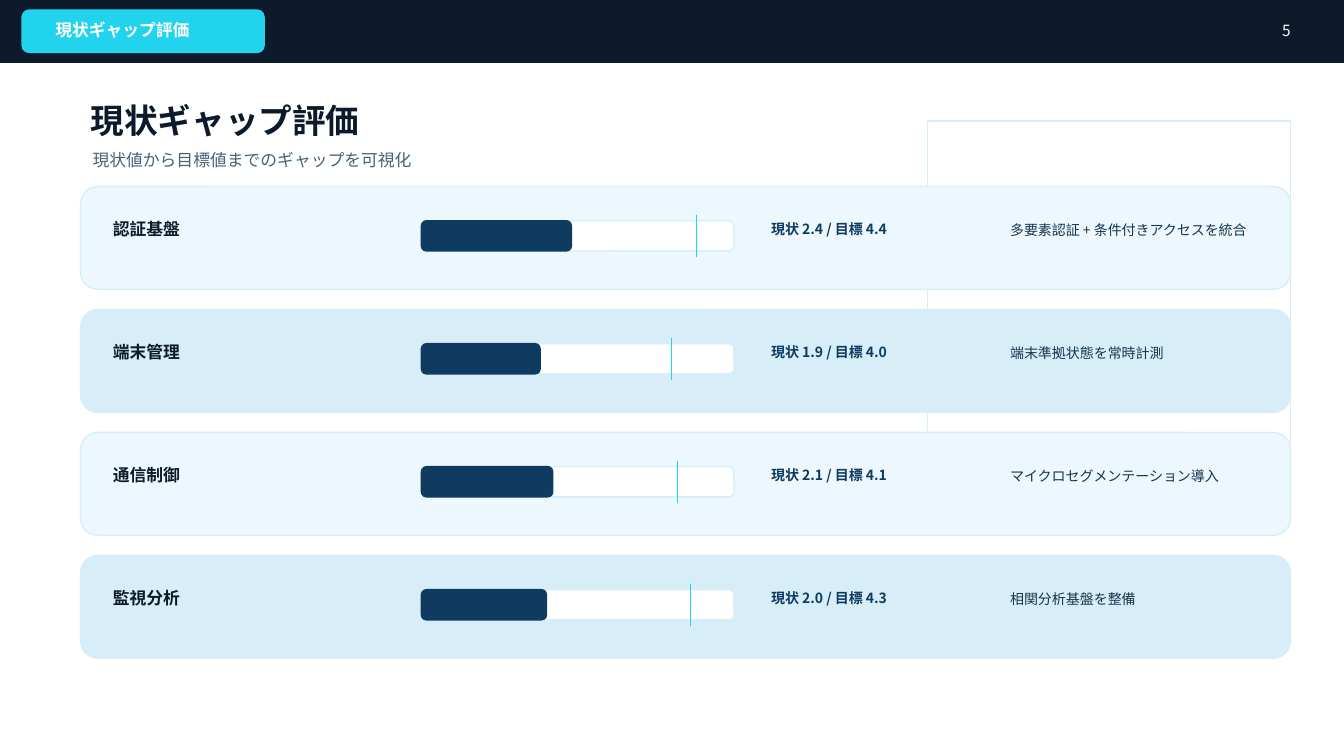
from pptx import Presentation
from pptx.dml.color import RGBColor
from pptx.enum.shapes import MSO_CONNECTOR as Connector, MSO_SHAPE as Preset
from pptx.enum.text import MSO_ANCHOR as Anchor, MSO_AUTO_SIZE as AutoSize, PP_ALIGN as Align
from pptx.oxml.ns import qn
from pptx.util import Pt
from lxml.etree import SubElement

HEADING = "現状ギャップ評価"
SUBTITLE = "現状値から目標値までのギャップを可視化"
PAGE_NUMBER = "5"
GAPS = [
    ("認証基盤", 2.4, 4.4, "多要素認証 + 条件付きアクセスを統合"),
    ("端末管理", 1.9, 4.0, "端末準拠状態を常時計測"),
    ("通信制御", 2.1, 4.1, "マイクロセグメンテーション導入"),
    ("監視分析", 2.0, 4.3, "相関分析基盤を整備"),
]
MAX_SCORE = 5

SANS = "Noto Sans CJK JP"
MONO = "DejaVu Sans Mono"
WHITE = RGBColor(0xFF, 0xFF, 0xFF)
INK = RGBColor(0x0C, 0x1A, 0x2C)
CYAN = RGBColor(0x22, 0xD3, 0xEE)
SLATE = RGBColor(0x44, 0x62, 0x7A)
NAVY = RGBColor(0x0E, 0x3B, 0x5F)
DEEP = RGBColor(0x16, 0x35, 0x4E)
PALE = RGBColor(0xEC, 0xF8, 0xFD)
ICE = RGBColor(0xD7, 0xEE, 0xF8)

PX = 9144
SLIDE_W, SLIDE_H = 1333, 750
CARD_X, CARD_Y, CARD_W, CARD_H, CARD_STEP = 80, 185, 1200, 102, 122
BAR_X, BAR_W, BAR_H = 418, 310, 30
FRAME_LEFT, FRAME_RIGHT, FRAME_TOP, FRAME_BOTTOM = 920, 1280, 120, 440

prs = Presentation()
prs.slide_width, prs.slide_height = SLIDE_W * PX, SLIDE_H * PX
slide = prs.slides.add_slide(prs.slide_layouts[5])


def emu(*lengths):
    return [round(length * PX) for length in lengths]


def rule(x1, y1, x2, y2, color):
    line = slide.shapes.add_connector(Connector.STRAIGHT, *emu(x1, y1, x2, y2))
    line.line.color.rgb = color
    line.line.width = Pt(1)
    SubElement(line._element.spPr, qn("a:effectLst"))


def block(box, fill, border, preset=Preset.ROUNDED_RECTANGLE):
    panel = slide.shapes.add_shape(preset, *emu(*box))
    panel.shadow.inherit = False
    panel.fill.solid()
    panel.fill.fore_color.rgb = fill
    panel.line.color.rgb = border
    panel.line.width = Pt(1)


def write(holder, text, size, color, bold=False, face=SANS, align=Align.LEFT):
    frame = holder.text_frame
    frame.word_wrap = True
    frame.auto_size = AutoSize.NONE
    frame.vertical_anchor = Anchor.MIDDLE
    paragraph = frame.paragraphs[0]
    paragraph.alignment = align
    run = paragraph.add_run()
    run.text = text
    font = run.font
    font.size, font.bold, font.name = Pt(size), bold, face
    font.color.rgb = color
    SubElement(run._r.get_or_add_rPr(), qn("a:ea"), typeface=face)


def label(box, *content, **style):
    write(slide.shapes.add_textbox(*emu(*box)), *content, **style)


rule(FRAME_LEFT, FRAME_TOP, FRAME_RIGHT, FRAME_TOP, ICE)
for x in (FRAME_LEFT, FRAME_RIGHT):
    rule(x, FRAME_TOP, x, FRAME_BOTTOM, ICE)

block((0, 0, SLIDE_W, 62), INK, INK, Preset.RECTANGLE)
block((22, 10, 240, 42), CYAN, CYAN)
label((45, 18, 880, 24), HEADING, 12, WHITE, bold=True)
label((1215, 18, 75, 24), PAGE_NUMBER, 11, WHITE, align=Align.RIGHT)

title = slide.shapes.title
title.left, title.top, title.width, title.height = emu(80, 95, 1140, 48)
write(title, HEADING, 24, INK, bold=True, face=MONO)
label((82, 144, 1120, 30), SUBTITLE, 12, SLATE)

for index, (area, current, target, action) in enumerate(GAPS):
    top = CARD_Y + index * CARD_STEP
    bar_y = top + 34
    target_x = BAR_X + BAR_W * target / MAX_SCORE
    block((CARD_X, top, CARD_W, CARD_H), ICE if index % 2 else PALE, ICE)
    label((102, top + 30, 295, 24), area, 12, INK, bold=True)
    block((BAR_X, bar_y, BAR_W, BAR_H), WHITE, ICE)
    block((BAR_X, bar_y, BAR_W * current / MAX_SCORE, BAR_H), NAVY, NAVY)
    rule(target_x, bar_y - 6, target_x, bar_y + BAR_H + 6, CYAN)
    label((755, top + 30, 225, 24), f"現状 {current:.1f} / 目標 {target:.1f}", 10, NAVY, bold=True)
    label((992, top + 20, 266, 46), action, 10, DEEP)

prs.save("out.pptx")
